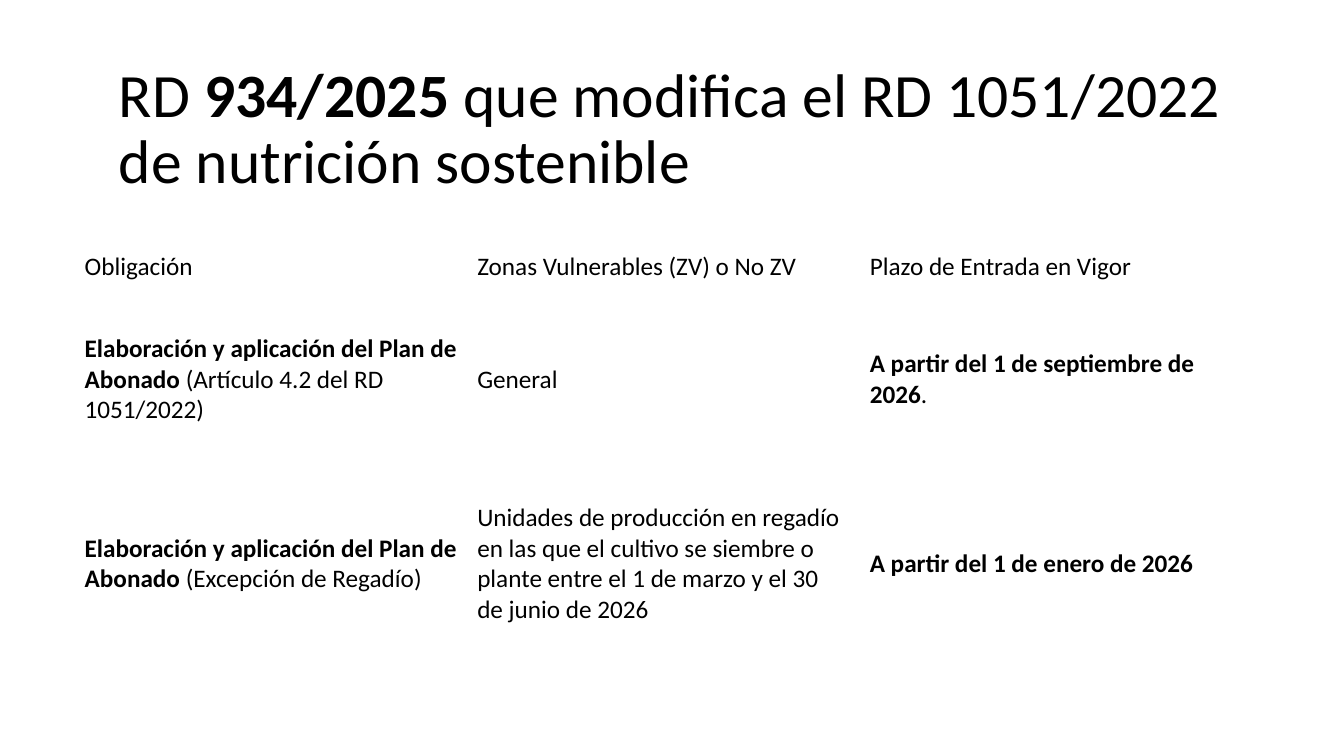
from dataclasses import dataclass

from pptx import Presentation
from pptx.dml.color import RGBColor
from pptx.enum.text import MSO_ANCHOR, MSO_AUTO_SIZE, PP_ALIGN
from pptx.slide import Slide
from pptx.text.text import TextFrame
from pptx.util import Inches, Pt

SLIDE_WIDTH, SLIDE_HEIGHT = Inches(13.33), Inches(7.5)


@dataclass(frozen=True)
class Theme:
    font: str = "Calibri"
    ink: RGBColor = RGBColor(0, 0, 0)
    paper: RGBColor = RGBColor(255, 255, 255)
    title_size: Pt = Pt(44)
    body_size: Pt = Pt(18)


@dataclass(frozen=True)
class Span:
    text: str
    bold: bool = False


@dataclass(frozen=True)
class Area:
    """A rectangle in inches on the slide."""
    left: float
    top: float
    width: float
    height: float

    def emu(self) -> tuple[int, int, int, int]:
        return (Inches(self.left), Inches(self.top),
                Inches(self.width), Inches(self.height))


@dataclass(frozen=True)
class Obligation:
    duty: tuple[Span, ...]
    zone: tuple[Span, ...]
    deadline: tuple[Span, ...]


THEME = Theme()
TITLE_AREA = Area(1.08, 0.57, 11.5, 1.45)
TABLE_AREA = Area(0.74, 2.33, 11.68, 4.3)
ROW_HEIGHTS = (0.64, 1.59, 2.07)

HEADLINE = (
    Span("RD "),
    Span("934/2025", bold=True),
    Span(" que modifica el RD 1051/2022 de nutrición sostenible"),
)
PLAN = Span("Elaboración y aplicación del Plan de Abonado", bold=True)
OBLIGATIONS = (
    Obligation(
        (Span("Obligación"),),
        (Span("Zonas Vulnerables (ZV) o No ZV"),),
        (Span("Plazo de Entrada en Vigor"),),
    ),
    Obligation(
        (PLAN, Span(" (Artículo 4.2 del RD 1051/2022)")),
        (Span("General"),),
        (Span("A partir del 1 de septiembre de 2026", bold=True), Span(".")),
    ),
    Obligation(
        (PLAN, Span(" (Excepción de Regadío)")),
        (Span("Unidades de producción en regadío en las que el cultivo se siembre "
              "o plante entre el 1 de marzo y el 30 de junio de 2026"),),
        (Span("A partir del 1 de enero de 2026", bold=True),),
    ),
)


def write_spans(frame: TextFrame, spans: tuple[Span, ...], size: Pt) -> None:
    paragraph = frame.paragraphs[0]
    paragraph.alignment = PP_ALIGN.LEFT
    paragraph.font.name = THEME.font
    paragraph.font.size = size
    paragraph.font.color.rgb = THEME.ink
    for span in spans:
        run = paragraph.add_run()
        run.text = span.text
        run.font.bold = span.bold


def add_headline(slide: Slide) -> None:
    headline = slide.shapes.title
    headline.left, headline.top, headline.width, headline.height = TITLE_AREA.emu()
    frame = headline.text_frame
    frame.word_wrap = True
    frame.auto_size = MSO_AUTO_SIZE.NONE
    frame.vertical_anchor = MSO_ANCHOR.MIDDLE
    write_spans(frame, HEADLINE, THEME.title_size)
    frame.paragraphs[0].line_spacing = 0.9


def add_obligations(slide: Slide) -> None:
    table = slide.shapes.add_table(len(OBLIGATIONS), 3, *TABLE_AREA.emu()).table
    table.first_row = table.horz_banding = False
    for row, height, obligation in zip(table.rows, ROW_HEIGHTS, OBLIGATIONS):
        row.height = Inches(height)
        contents = (obligation.duty, obligation.zone, obligation.deadline)
        for cell, spans in zip(row.cells, contents):
            cell.fill.solid()
            cell.fill.fore_color.rgb = THEME.paper
            cell.vertical_anchor = MSO_ANCHOR.MIDDLE
            write_spans(cell.text_frame, spans, THEME.body_size)


def main() -> None:
    deck = Presentation()
    deck.slide_width, deck.slide_height = SLIDE_WIDTH, SLIDE_HEIGHT
    slide = deck.slides.add_slide(deck.slide_layouts.get_by_name("Title Only"))
    add_obligations(slide)
    add_headline(slide)
    deck.save("out.pptx")


if __name__ == "__main__":
    main()
